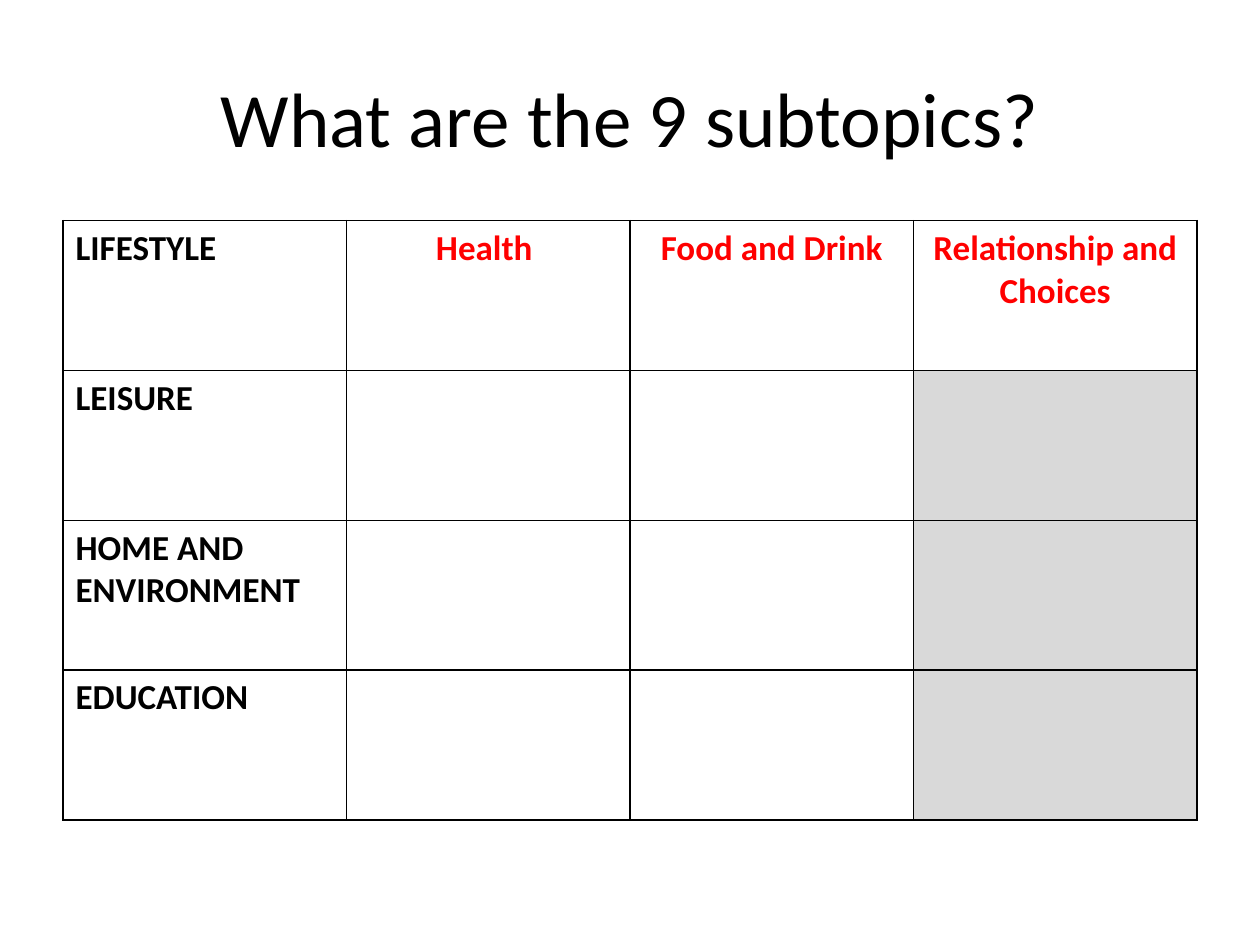
import pptx
import pptx.util
import pptx.dml.color
import pptx.enum.text
import pptx.oxml
import pptx.oxml.ns
from pptx.util import Inches

RGBColor = pptx.dml.color.RGBColor
ALIGN = pptx.enum.text.PP_ALIGN
BLACK = RGBColor(0x00, 0x00, 0x00)
RED = RGBColor(0xFF, 0x00, 0x00)
WHITE = RGBColor(0xFF, 0xFF, 0xFF)
GREY = RGBColor(0xD9, 0xD9, 0xD9)

TOPICS = [
    ["LIFESTYLE", "Health ", "Food and Drink", "Relationship and Choices"],
    ["LEISURE", "", "", None],
    ["HOME AND ENVIRONMENT", "", "", None],
    ["EDUCATION", "", "", None],
]


def set_text(frame, text, size, color, align, bold=False):
    frame.text = text
    para = frame.paragraphs[0]
    para.alignment = align
    for run in para.runs:
        font = run.font
        font.name = "Calibri"
        font.size = pptx.util.Pt(size)
        font.bold = bold
        font.color.rgb = color


def add_title(slide, text, left, top, width, height):
    frame = slide.shapes.add_textbox(left, top, width, height).text_frame
    frame.word_wrap = True
    frame.vertical_anchor = pptx.enum.text.MSO_ANCHOR.MIDDLE
    set_text(frame, text, 44, BLACK, ALIGN.CENTER)


def set_border(cell):
    """Draw a one point line on all four sides; lines must precede the fill."""
    props = cell._tc.get_or_add_tcPr()
    for index, side in enumerate(("lnL", "lnR", "lnT", "lnB")):
        line = pptx.oxml.parse_xml(
            f'<a:{side} {pptx.oxml.ns.nsdecls("a")} w="12700"><a:solidFill>'
            f'<a:srgbClr val="{BLACK}"/></a:solidFill></a:{side}>'
        )
        props.insert(index, line)


def add_grid(slide, rows, left, top, width, height):
    """Fill the box with an even table; None marks a cell that is not used."""
    count = len(rows[0])
    table = slide.shapes.add_table(
        len(rows), count, left, top, width, height
    ).table
    table.first_row = table.horz_banding = False
    for r, row in enumerate(rows):
        for c, text in enumerate(row):
            cell = table.cell(r, c)
            cell.fill.solid()
            cell.fill.fore_color.rgb = GREY if text is None else WHITE
            set_border(cell)
            if text:
                color, align = (RED, ALIGN.CENTER) if c else (BLACK, ALIGN.LEFT)
                set_text(cell.text_frame, text, 20, color, align, bold=True)


def main():
    deck = pptx.Presentation()
    deck.slide_width, deck.slide_height = Inches(10), Inches(7.5)
    slide = deck.slides.add_slide(deck.slide_layouts[6])
    left, width = Inches(0.5), Inches(9)
    add_title(slide, "What are the 9 subtopics?",
              left, Inches(0.3), width, Inches(1.25))
    add_grid(slide, TOPICS, left, Inches(1.75), width, Inches(4.76))
    deck.save("out.pptx")


if __name__ == "__main__":
    main()
